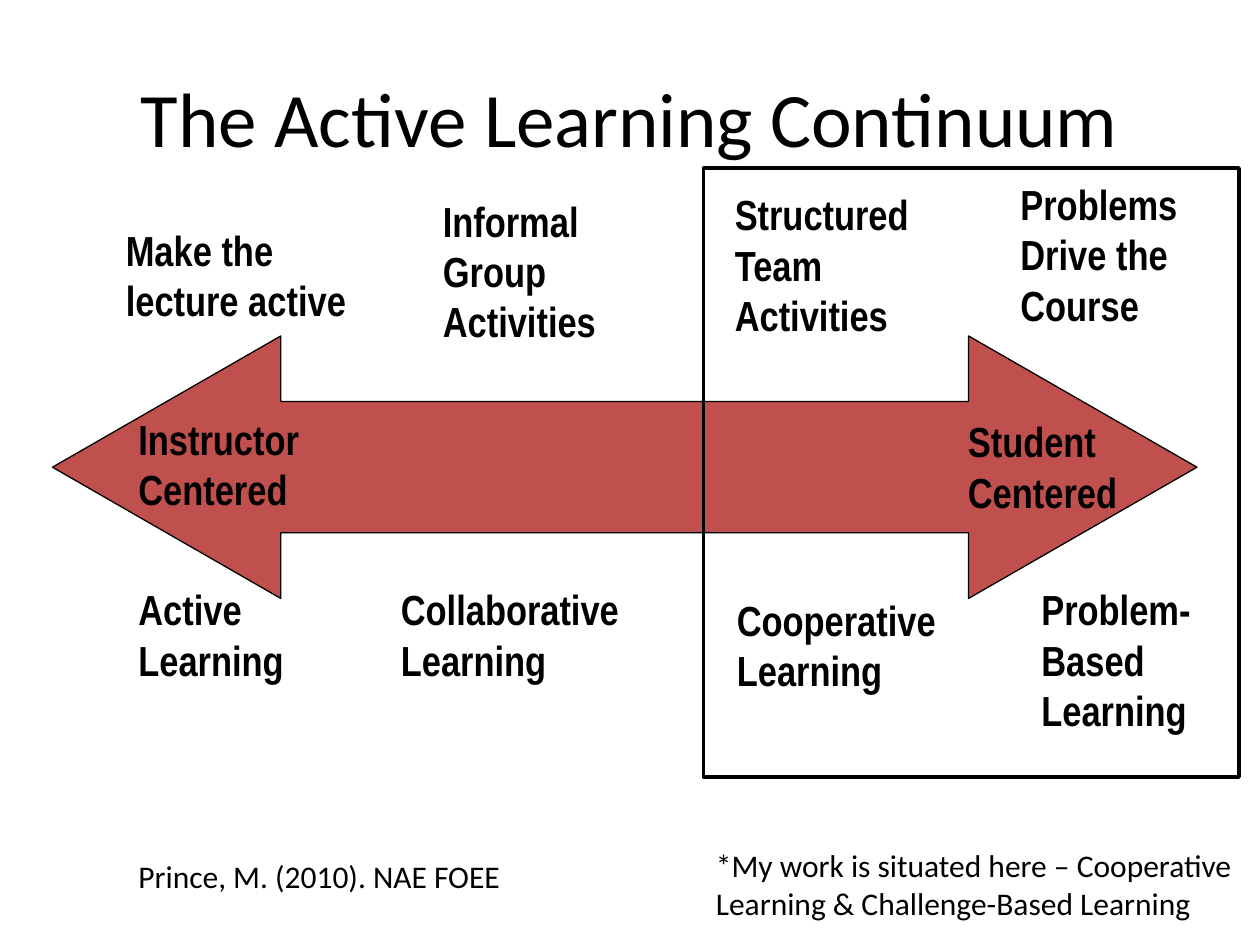
from dataclasses import dataclass

from pptx import Presentation
from pptx.dml.color import RGBColor
from pptx.enum.shapes import MSO_SHAPE
from pptx.enum.text import MSO_ANCHOR, MSO_AUTO_SIZE, PP_ALIGN
from pptx.util import Inches, Pt

ARROW, RECT = MSO_SHAPE.LEFT_RIGHT_ARROW, MSO_SHAPE.RECTANGLE
LEFT, CENTER = PP_ALIGN.LEFT, PP_ALIGN.CENTER
MIDDLE = MSO_ANCHOR.MIDDLE
GROW = MSO_AUTO_SIZE.SHAPE_TO_FIT_TEXT
COLS, ROWS = 120, 90


@dataclass(frozen=True)
class Theme:
    ink: RGBColor = RGBColor(0, 0, 0)
    red: RGBColor = RGBColor(0xC0, 0x50, 0x4D)
    body: str = "Calibri"
    label: str = "Arial Narrow"
    head: int = 44
    mid: int = 24
    small: int = 18


def write(frame, text, *, font, size, color, bold=False, align=LEFT):
    frame.text = text
    for para in frame.paragraphs:
        para.alignment = align
        for run in para.runs:
            run.font.name, run.font.size = font, Pt(size)
            run.font.bold = bold
            run.font.color.rgb = color


class Board:
    """Hold the theme and the current slide, and draw on a 120 by 90 grid."""

    def __init__(self, deck, theme):
        self.theme = theme
        self.slide = deck.slides.add_slide(deck.slide_layouts[5])
        self.col = deck.slide_width / COLS
        self.row = deck.slide_height / ROWS

    def place(self, x, y, w, h):
        return [round(n) for n in (x * self.col, y * self.row, w * self.col, h * self.row)]

    def title(self, text, *box):
        head = self.slide.shapes.title
        head.left, head.top, head.width, head.height = self.place(*box)
        head.text_frame.vertical_anchor = MIDDLE
        write(head.text_frame, text, font=self.theme.body, size=self.theme.head,
              color=self.theme.ink, align=CENTER)

    def shape(self, kind, *box, weight, fill=None):
        item = self.slide.shapes.add_shape(kind, *self.place(*box))
        item.shadow.inherit = False
        if fill is None:
            item.fill.background()
        else:
            item.fill.solid()
            item.fill.fore_color.rgb = fill
        item.line.color.rgb = self.theme.ink
        item.line.width = Pt(weight)
        return item

    def text(self, text, *box, **style):
        frame = self.slide.shapes.add_textbox(*self.place(*box)).text_frame
        frame.word_wrap = False
        frame.auto_size = GROW
        write(frame, text, color=self.theme.ink, **style)

    def label(self, text, x, y, w):
        high = 6 + 4.8 * text.count("\n")
        self.text(text, x, y, w, high, font=self.theme.label, size=self.theme.mid, bold=True)

    def note(self, text, x, y, w):
        high = 4.8 + 3.7 * text.count("\n")
        self.text(text, x, y, w, high, font=self.theme.body, size=self.theme.small)


LABELS = [
    ("Make the\nlecture active", 10.8, 20.8, 23.4),
    ("Informal\nGroup\nActivities", 41, 18, 17),
    ("Structured\nTeam\nActivities", 68.8, 17.4, 19),
    ("Problems\nDrive the\nCourse", 96, 16.4, 17.4),
    ("Instructor\nCentered", 12, 38.8, 18.6),
    ("Student\nCentered", 91, 39, 16.7),
    ("Active\nLearning", 12, 55, 16.3),
    ("Collaborative\nLearning", 37, 55, 23.3),
    ("Cooperative\nLearning", 69, 56, 21.4),
    ("Problem-\nBased\nLearning", 98, 55, 16.7),
]
NOTES = [
    ("Prince, M. (2010). NAE FOEE", 12, 81, 37.2),
    ("*My work is situated here – Cooperative\nLearning & Challenge-Based Learning", 67, 80, 52.1),
]


def main():
    deck = Presentation()
    deck.slide_width, deck.slide_height = Inches(10), Inches(7.5)
    theme = Theme()
    board = Board(deck, theme)
    arrow = board.shape(ARROW, 5, 32, 109, 25, weight=0.75, fill=theme.red)
    arrow.adjustments[0], arrow.adjustments[1] = 0.5, 0.87
    board.title("The Active Learning Continuum", 6, 3.6, 108, 15)
    for item in LABELS:
        board.label(*item)
    board.shape(RECT, 67, 16, 51, 58, weight=2)
    for item in NOTES:
        board.note(*item)
    deck.save("out.pptx")


if __name__ == "__main__":
    main()
